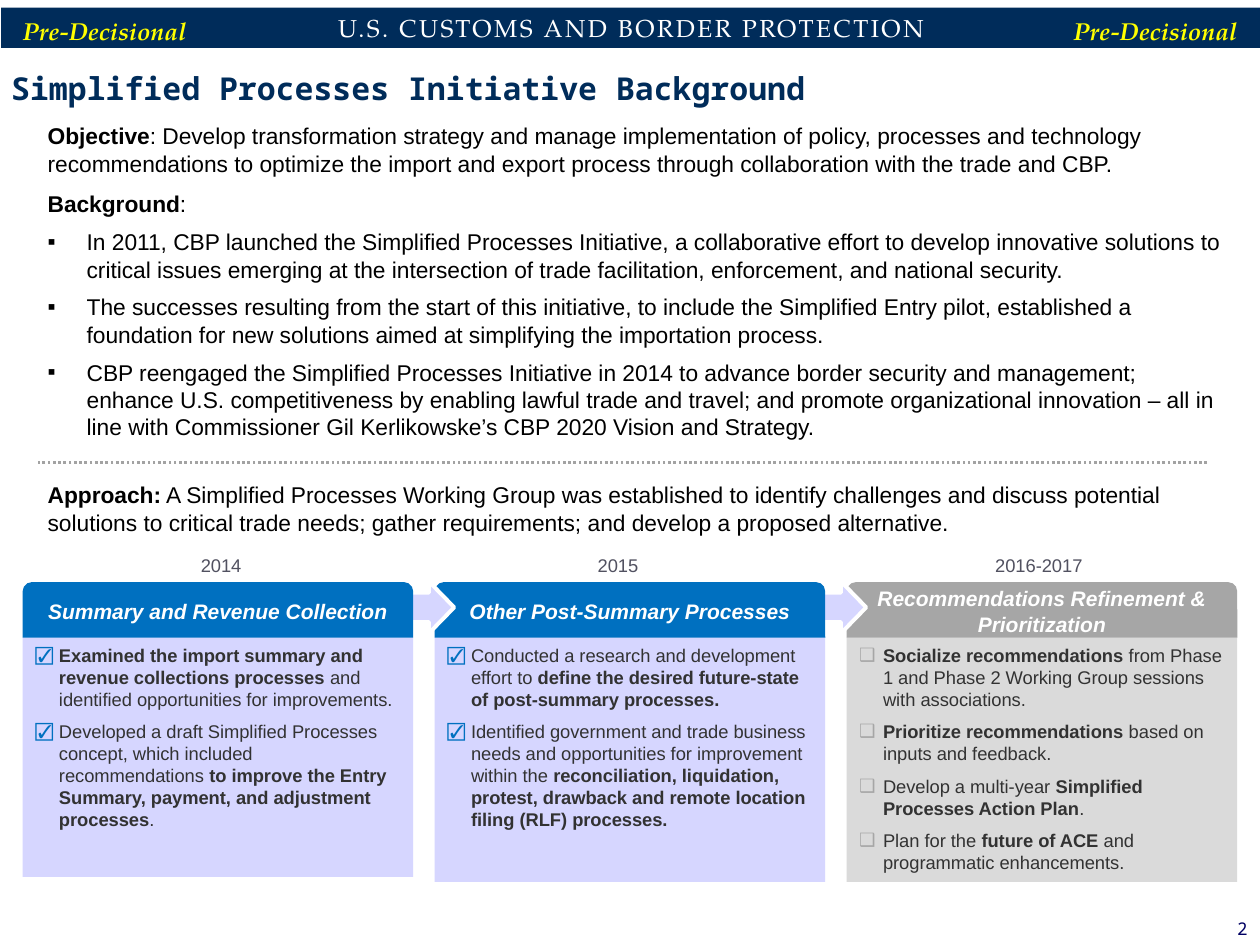
from lxml.etree import SubElement
from pptx import Presentation
from pptx.dml.color import RGBColor
from pptx.enum.dml import MSO_LINE_DASH_STYLE as Dash
from pptx.enum.shapes import MSO_CONNECTOR, MSO_SHAPE as Shape
from pptx.enum.text import MSO_ANCHOR as Anchor, PP_ALIGN as Align
from pptx.oxml.ns import qn
from pptx.util import Inches, Pt

NAVY = RGBColor(0x00, 0x2C, 0x5A)
PAGE_BLUE = RGBColor(0x00, 0x00, 0x63)
YELLOW = RGBColor(0xFF, 0xFF, 0x00)
WHITE = RGBColor(0xFF, 0xFF, 0xFF)
BLACK = RGBColor(0x00, 0x00, 0x00)
BLUE = RGBColor(0x00, 0x70, 0xC0)
LAVENDER = RGBColor(0xD6, 0xD6, 0xFF)
GRAY = RGBColor(0xA6, 0xA6, 0xA6)
LIGHT_GRAY = RGBColor(0xDA, 0xDA, 0xDA)
RULE_GRAY = RGBColor(0xA3, 0xA3, 0xA3)
BODY_GRAY = RGBColor(0x32, 0x32, 0x32)
YEAR_GRAY = RGBColor(0x51, 0x51, 0x60)

SANS, MONO, SERIF = "Arial", "Noto Sans Mono", "TeX Gyre Pagella"
BANNER = "U.S. CUSTOMS AND BORDER PROTECTION"
MARKING = "Pre-Decisional"
TITLE = "Simplified Processes Initiative Background"
OBJECTIVE = (
    "**Objective**: Develop transformation strategy and manage implementation of policy, processes and "
    "technology recommendations to optimize the import and export process through collaboration with "
    "the trade and CBP."
)
BACKGROUND = "**Background**:"
BACKGROUND_POINTS = [
    "In 2011, CBP launched the Simplified Processes Initiative, a collaborative effort to develop "
    "innovative solutions to critical issues emerging at the intersection of trade facilitation, "
    "enforcement, and national security.",
    "The successes resulting from the start of this initiative, to include the Simplified Entry pilot, "
    "established a foundation for new solutions aimed at simplifying the importation process.",
    "CBP reengaged the Simplified Processes Initiative in 2014 to advance border security and management; "
    "enhance U.S. competitiveness by enabling lawful trade and travel; and promote organizational "
    "innovation – all in line with Commissioner Gil Kerlikowske’s CBP 2020 Vision and Strategy.",
]
APPROACH = (
    "**Approach:** A Simplified Processes Working Group was established to identify challenges and discuss "
    "potential solutions to critical trade needs; gather requirements; and develop a proposed alternative."
)
PHASES = [
    {
        "year": "2014", "year_left": 0.3, "heading": "Summary and Revenue Collection",
        "header_fill": BLUE, "body_fill": LAVENDER, "bullet": "☑", "body_height": 1.9, "inset": 0.1,
        "points": [
            "**Examined the import summary and revenue collections processes **and identified opportunities "
            "for improvements.",
            "Developed a draft Simplified Processes concept, which included recommendations **to improve the "
            "Entry Summary, payment, and adjustment processes**.",
        ],
    },
    {
        "year": "2015", "year_left": 3.45, "heading": "Other Post-Summary Processes",
        "header_fill": BLUE, "body_fill": LAVENDER, "bullet": "☑", "body_height": 1.94, "inset": 0,
        "points": [
            "Conducted a research and development effort to **define the desired future-state of "
            "post-summary processes.**",
            "Identified government and trade business needs and opportunities for improvement within the "
            "**reconciliation, liquidation, protest, drawback and remote location filing (RLF) processes.**",
        ],
    },
    {
        "year": "2016-2017", "year_left": 6.79, "heading": "Recommendations Refinement & Prioritization",
        "header_fill": GRAY, "body_fill": LIGHT_GRAY, "bullet": "❑", "body_height": 1.94, "inset": 0.1,
        "points": [
            "**Socialize recommendations **from Phase 1 and Phase 2 Working Group sessions with associations.",
            "**Prioritize recommendations **based on inputs and feedback.",
            "Develop a multi-year **Simplified Processes Action Plan**.",
            "Plan for the **future of ACE **and programmatic enhancements.",
        ],
    },
]
PHASE_LEFT, PHASE_PITCH, PHASE_WIDTH = 0.18, 3.27, 3.1
HEADER_TOP, HEADER_HEIGHT, BODY_TOP = 4.62, 0.44, 5.06

presentation = Presentation()
presentation.slide_width, presentation.slide_height = Inches(10), Inches(7.5)
slide = presentation.slides.add_slide(presentation.slide_layouts[6])


def add_box(kind, at, fill, line=None):
    shape = slide.shapes.add_shape(kind, *map(Inches, at))
    shape.shadow.inherit = False
    shape.fill.solid()
    shape.fill.fore_color.rgb = fill
    if line is None:
        shape.line.fill.background()
    else:
        shape.line.color.rgb = line
        shape.line.width = Pt(2.25)
    return shape


def add_bullet(paragraph, character, indent, color=None):
    properties = paragraph._p.get_or_add_pPr()
    properties.set("marL", str(Inches(indent)))
    properties.set("indent", str(-Inches(indent)))
    if color is not None:
        SubElement(SubElement(properties, qn("a:buClr")), qn("a:srgbClr")).set("val", str(color))
    SubElement(properties, qn("a:buFont")).set("typeface", SANS)
    SubElement(properties, qn("a:buChar")).set("char", character)


def write(shape, texts, size, color, font=SANS, align=Align.LEFT, anchor=Anchor.TOP,
          bold=False, italic=False, before=0, after=0, bullet=None):
    frame = shape.text_frame
    frame.word_wrap = True
    frame.vertical_anchor = anchor
    for index, text in enumerate(texts):
        paragraph = frame.paragraphs[0] if index == 0 else frame.add_paragraph()
        paragraph.alignment = align
        paragraph.space_before, paragraph.space_after = Pt(before), Pt(after)
        if bullet and not text.startswith(BACKGROUND):
            add_bullet(paragraph, *bullet)
        paragraph.font.name, paragraph.font.size = font, Pt(size)
        paragraph.font.color.rgb = color
        paragraph.font.italic = italic
        for position, part in enumerate(text.split("**")):
            if part:
                run = paragraph.add_run()
                run.text = part
                run.font.bold = bold or position % 2 == 1
    return frame


def add_text(at, texts, size, color, **style):
    return write(slide.shapes.add_textbox(*map(Inches, at)), texts, size, color, **style)


def add_phase(index, phase):
    left = PHASE_LEFT + index * PHASE_PITCH
    body = add_box(Shape.RECTANGLE, (left, BODY_TOP, PHASE_WIDTH, phase["body_height"]), phase["body_fill"])
    bullet_color = GRAY if phase["header_fill"] == GRAY else BLUE
    write(body, phase["points"], 10.5, BODY_GRAY, after=6, bullet=(phase["bullet"], 0.19, bullet_color))
    header = add_box(Shape.ROUND_2_SAME_RECTANGLE, (left, HEADER_TOP, PHASE_WIDTH, HEADER_HEIGHT),
                     phase["header_fill"])
    frame = write(header, [phase["heading"]], 12, WHITE, align=Align.CENTER, anchor=Anchor.MIDDLE,
                  bold=True, italic=True)
    frame.margin_left = frame.margin_right = Inches(phase["inset"])
    if index:
        arrow = add_box(Shape.DOWN_ARROW, (left - 0.25, HEADER_TOP, 0.41, 0.4), LAVENDER, WHITE)
        arrow.adjustments[0] = 0.57
        arrow.rotation = 270
    add_text((phase["year_left"], 4.35, 2.91, 0.24), [phase["year"]], 10.5, YEAR_GRAY, align=Align.CENTER)


banner = add_box(Shape.RECTANGLE, (0.01, 0.06, 10, 0.32), NAVY)
banner_frame = write(banner, [BANNER], 14, WHITE, font=SERIF, align=Align.CENTER, anchor=Anchor.MIDDLE)
banner_frame.paragraphs[0].runs[0].font._element.set("spc", "140")
for marking_left in (0, 8.34):
    add_text((marking_left, 0.08, 1.66, 0.34), [MARKING], 14, YELLOW, font=SERIF, align=Align.CENTER,
             bold=True, italic=True)
add_text((9.5, 7.23, 0.5, 0.27), ["2"], 10, PAGE_BLUE, font=MONO, align=Align.RIGHT, anchor=Anchor.BOTTOM)
add_text((-0.01, 0.31, 10.01, 0.78), [TITLE], 18, NAVY, font=MONO, anchor=Anchor.MIDDLE, bold=True)

add_text((0.28, 0.92, 9.61, 0.54), [OBJECTIVE], 13, BLACK, before=6)
add_text((0.28, 1.46, 9.5, 2.12), [BACKGROUND, *BACKGROUND_POINTS], 13, BLACK, before=6, bullet=("▪", 0.31))
add_text((0.28, 3.77, 9.61, 0.54), [APPROACH], 13, BLACK, before=6)

divider = slide.shapes.add_connector(MSO_CONNECTOR.STRAIGHT, *map(Inches, (9.58, 3.67, 0.3, 3.67)))
divider.line.color.rgb = RULE_GRAY
divider.line.width = Pt(1.5)
divider.line.dash_style = Dash.ROUND_DOT
SubElement(divider._element.spPr, qn("a:effectLst"))

for index, phase in reversed(list(enumerate(PHASES))):
    add_phase(index, phase)

presentation.save("out.pptx")
